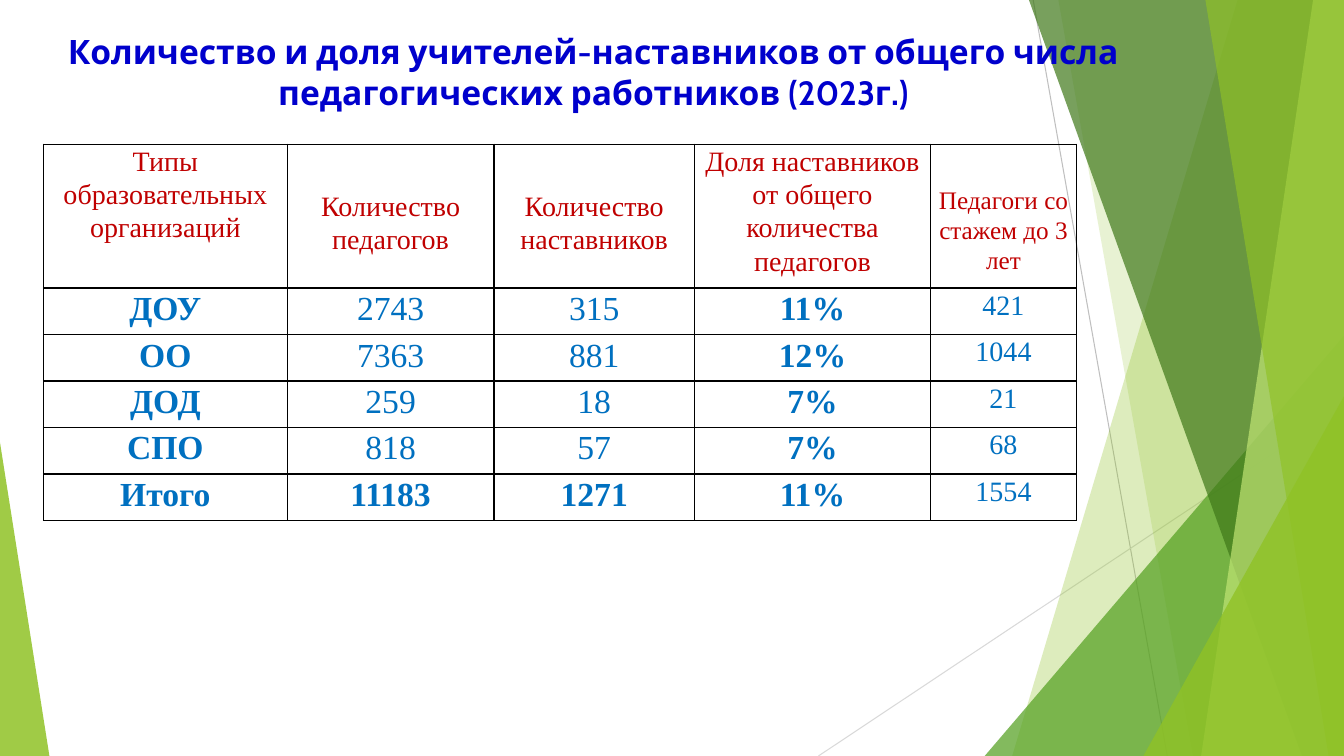
import pptx
import pptx.util
import pptx.dml.color
import pptx.enum.shapes
import pptx.enum.text
import pptx.oxml
import pptx.oxml.ns

Pt = pptx.util.Pt
RGB = pptx.dml.color.RGBColor
qn = pptx.oxml.ns.qn
SHAPE = pptx.enum.shapes.MSO_SHAPE
CENTER = pptx.enum.text.PP_ALIGN.CENTER
NS = pptx.oxml.ns.nsdecls("a")

# Colours
LIME = RGB(0x90, 0xC2, 0x26)
GREEN = RGB(0x54, 0xA0, 0x21)
DARK = RGB(0x3F, 0x78, 0x19)
PALE = RGB(0xC0, 0xE4, 0x74)
SILVER = RGB(0xBF, 0xBF, 0xBF)
MIST = RGB(0xD9, 0xD9, 0xD9)
NAVY = RGB(0x00, 0x00, 0xCC)
RED = RGB(0xC0, 0x00, 0x00)
BLUE = RGB(0x00, 0x70, 0xC0)

# Content
TITLE = ("Количество и доля учителей-наставников от общего числа "
         "педагогических работников (2023г.)")
# heading, size, top inset
HEADS = [
    ("Типы образовательных организаций", 20, 0),
    ("Количество педагогов", 20, 32),
    ("Количество наставников", 20, 32),
    ("Доля наставников от общего количества педагогов", 20, 0),
    ("Педагоги со стажем до 3 лет", 18, 29.4),
]
ROWS = [
    ("ДОУ", "2743", "315", "11%", "421"),
    ("ОО", "7363", "881", "12%", "1044"),
    ("ДОД", "259", "18", "7%", "21"),
    ("СПО", "818", "57", "7%", "68"),
    ("Итого", "11183", "1271", "11%", "1554"),
]

# Layout, in points
WIDE, HIGH = 960, 540
COLS = [174.2, 147.6, 143.3, 168.5, 104.4]
HEAD_H, ROW_H = 95, 33.2
LEFT, TOP = 31, 103
LINES = [(738, 0, 833.8, HIGH, SILVER), (WIDE, 290.2, 584.6, HIGH, MIST)]
# bands: top left, top right, bottom right, bottom left (x only)
# peaks: left, top, width, apex
DECOR = [
    ("band", (884.2, WIDE, WIDE, 722.9), LIME, 30),
    ("band", (756, WIDE, WIDE, 851.8), LIME, 20),
    ("peak", (703.4, 239.8, 256.6, 1), GREEN, 72),
    ("band", (735.1, WIDE, WIDE, 929.5), DARK, 70),
    ("band", (938.2, WIDE, WIDE, 858.2), PALE, 70),
    ("band", (861.1, WIDE, WIDE, 949), LIME, 65),
    ("peak", (816.7, 283, 143.3, 1), LIME, 80),
    ("peak", (0, 316.1, 35.3, 0), LIME, 85),
]

deck = pptx.Presentation()
deck.slide_width, deck.slide_height = Pt(WIDE), Pt(HIGH)
slide = deck.slides.add_slide(deck.slide_layouts[6])
shapes = slide.shapes


def style(par, size, color, bold, font):
    par.alignment = CENTER
    for run in par.runs:
        run.font.size = Pt(size)
        run.font.bold = bold
        run.font.name = font
        run.font.color.rgb = color


def band(spots):
    a, b, c, d = spots
    path = shapes.build_freeform(a, 0, scale=Pt(1))
    path.add_line_segments([(b, 0), (c, HIGH), (d, HIGH)], close=True)
    return path.convert_to_shape()


def peak(spots):
    x, y, w, tip = spots
    shape = shapes.add_shape(SHAPE.ISOSCELES_TRIANGLE,
                             Pt(x), Pt(y), Pt(w), Pt(HIGH - y))
    shape.adjustments[0] = tip
    return shape


def border(cell):
    props = cell._tc.get_or_add_tcPr()
    for side in ("lnL", "lnR", "lnT", "lnB"):
        props.append(pptx.oxml.parse_xml(
            f'<a:{side} {NS} w="{int(Pt(1))}"><a:solidFill>'
            f'<a:srgbClr val="000000"/></a:solidFill></a:{side}>'))


def put(cell, text, size, color, bold, inset=0):
    border(cell)
    cell.fill.background()
    cell.margin_left = cell.margin_right = Pt(5)
    cell.margin_top, cell.margin_bottom = Pt(inset), 0
    cell.text_frame.text = text
    par = cell.text_frame.paragraphs[0]
    par.line_spacing = 1.07
    par.space_after = Pt(8)
    style(par, size, color, bold, "Times New Roman")


# Thin lines
for x1, y1, x2, y2, color in LINES:
    line = shapes.add_connector(pptx.enum.shapes.MSO_CONNECTOR.STRAIGHT,
                                Pt(x1), Pt(y1), Pt(x2), Pt(y2))
    line.line.color.rgb = color
    line.line.width = Pt(0.75)
    line._element.spPr.append(pptx.oxml.parse_xml(f"<a:effectLst {NS}/>"))

# Green facets
DRAW = {"band": band, "peak": peak}
for kind, spots, color, alpha in DECOR:
    shape = DRAW[kind](spots)
    shape.shadow.inherit = False
    shape.line.fill.background()
    shape.fill.solid()
    shape.fill.fore_color.rgb = color
    tint = pptx.oxml.parse_xml(f'<a:alpha {NS} val="{alpha * 1000}"/>')
    shape._element.spPr.find(".//" + qn("a:srgbClr")).append(tint)

# Title
box = shapes.add_textbox(Pt(20.2), Pt(18.7), Pt(807.1), Pt(70))
box.text_frame.word_wrap = True
box.text_frame.text = TITLE
style(box.text_frame.paragraphs[0], 24, NAVY, True, "Cabin")

# Table
table = shapes.add_table(len(ROWS) + 1, len(COLS), Pt(LEFT), Pt(TOP),
                         Pt(sum(COLS)), Pt(HEAD_H + ROW_H * len(ROWS))).table
table.first_row = table.horz_banding = False
for col, wide in zip(table.columns, COLS):
    col.width = Pt(wide)
for i, row in enumerate(table.rows):
    row.height = Pt(ROW_H if i else HEAD_H)
for j, (text, size, inset) in enumerate(HEADS):
    put(table.cell(0, j), text, size, RED, False, inset)
for i, row in enumerate(ROWS, 1):
    for j, text in enumerate(row):
        last = j == len(COLS) - 1
        bold = j in (0, 3) or (i == len(ROWS) and not last)
        put(table.cell(i, j), text, 20 if last else 24, BLUE, bold)

deck.save("out.pptx")
